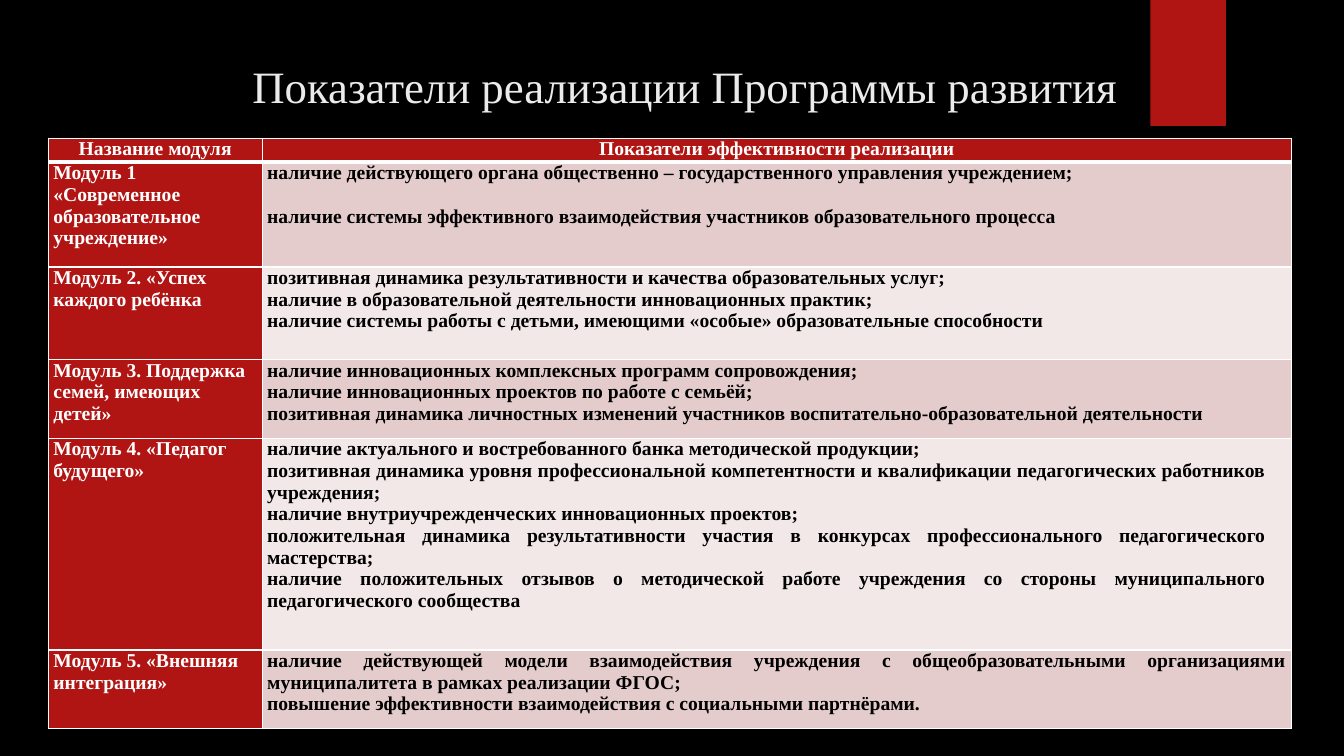
from lxml.etree import SubElement
from pptx import Presentation
from pptx.dml.color import RGBColor
from pptx.enum.shapes import MSO_SHAPE
from pptx.enum.text import MSO_ANCHOR, PP_ALIGN
from pptx.oxml.ns import qn
from pptx.util import Inches, Pt

FONT = "Times New Roman"
RED, WHITE, BLACK = "B01513", "FFFFFF", "000000"
BANDS = ("E4CCCC", "F2E8E7")
COLUMNS = (2.12, 10.21)
ROWS = (0.24, 1.04, 0.92, 0.78, 2.1, 0.78)
BLANK_LINE = 15.5
NARROWED_ROW = 4

HEADER = ("Название модуля", ["Показатели эффективности реализации"])
MODULES = [
    ("Модуль 1 «Современное образовательное учреждение»", [
        "наличие действующего органа общественно – государственного управления учреждением;",
        "наличие системы эффективного взаимодействия участников образовательного процесса"]),
    ("Модуль 2. «Успех каждого ребёнка", [
        "позитивная динамика результативности и качества образовательных услуг;",
        "наличие в образовательной деятельности инновационных практик;",
        "наличие системы работы с детьми, имеющими «особые» образовательные способности"]),
    ("Модуль 3. Поддержка семей, имеющих детей»", [
        "наличие инновационных комплексных программ сопровождения;",
        "наличие инновационных проектов по работе с семьёй;",
        "позитивная динамика личностных изменений участников воспитательно-образовательной деятельности"]),
    ("Модуль 4. «Педагог будущего»", [
        "наличие актуального и востребованного банка методической продукции;",
        "позитивная динамика уровня профессиональной компетентности и квалификации "
        "педагогических работников учреждения;",
        "наличие внутриучрежденческих инновационных проектов;",
        "положительная динамика результативности участия в конкурсах профессионального "
        "педагогического мастерства;",
        "наличие положительных отзывов о методической работе учреждения со стороны "
        "муниципального педагогического сообщества"]),
    ("Модуль 5. «Внешняя интеграция»", [
        "наличие действующей модели взаимодействия учреждения с общеобразовательными "
        "организациями муниципалитета в рамках реализации ФГОС;",
        "повышение эффективности взаимодействия с социальными партнёрами."]),
]


def paint(fill, color):
    fill.solid()
    fill.fore_color.rgb = RGBColor.from_string(color)


def style(p, size, color, align, bold=False):
    p.alignment = align
    for r in p.runs:
        r.font.name, r.font.size, r.font.bold = FONT, Pt(size), bold
        r.font.color.rgb = RGBColor.from_string(color)


def add_borders(cell, bottom=1):
    """Must run before the cell is filled, as lines precede the fill."""
    tc_pr = cell._tc.get_or_add_tcPr()
    for side, width in (("L", 1), ("R", 1), ("T", 1), ("B", bottom)):
        ln = SubElement(tc_pr, qn(f"a:ln{side}"), w=str(Pt(width)))
        SubElement(SubElement(ln, qn("a:solidFill")), qn("a:srgbClr"), val=WHITE)


def fill_cell(cell, lines, fill, color, align, bottom=1):
    cell.margin_left = cell.margin_right = Inches(0.05)
    cell.margin_top = cell.margin_bottom = 0
    add_borders(cell, bottom)
    paint(cell.fill, fill)
    cell.text_frame.text = "\n".join(lines)
    for p in cell.text_frame.paragraphs:
        style(p, 14, color, align, bold=True)


def add_ribbon(s, *box):
    sp = s.shapes.add_shape(MSO_SHAPE.RECTANGLE, *map(Inches, box))
    sp.shadow.inherit = False
    paint(sp.fill, RED)
    sp.line.fill.background()


def set_title(s, text, *box):
    sp = s.shapes.title
    sp.left, sp.top, sp.width, sp.height = map(Inches, box)
    tf = sp.text_frame
    tf.text = text
    tf.word_wrap = True
    tf.vertical_anchor = MSO_ANCHOR.MIDDLE
    style(tf.paragraphs[0], 32, "EBEBEB", PP_ALIGN.CENTER)


def add_modules_table(s, left, top):
    box = map(Inches, (left, top, sum(COLUMNS), sum(ROWS)))
    table = s.shapes.add_table(len(ROWS), len(COLUMNS), *box).table
    for column, width in zip(table.columns, COLUMNS):
        column.width = Inches(width)
    for row, height in zip(table.rows, ROWS):
        row.height = Inches(height)
    for i, (name, indicators) in enumerate([HEADER] + MODULES):
        name_cell, list_cell = table.cell(i, 0), table.cell(i, 1)
        if i == 0:
            fill_cell(name_cell, [name], RED, WHITE, PP_ALIGN.CENTER, bottom=3)
            fill_cell(list_cell, indicators, RED, WHITE, PP_ALIGN.CENTER, bottom=3)
        else:
            fill_cell(name_cell, [name], RED, WHITE, PP_ALIGN.LEFT)
            fill_cell(list_cell, indicators, BANDS[(i - 1) % 2], BLACK, PP_ALIGN.JUSTIFY)
    table.cell(1, 1).text_frame.paragraphs[1].space_before = Pt(BLANK_LINE)
    for p in table.cell(NARROWED_ROW, 1).text_frame.paragraphs:
        p._p.get_or_add_pPr().set("marR", str(Inches(0.2)))


def main():
    prs = Presentation()
    prs.slide_width, prs.slide_height = Inches(13.33), Inches(7.5)
    s = prs.slides.add_slide(prs.slide_layouts[5])
    paint(s.background.fill, BLACK)
    add_ribbon(s, 11.41, 0, 0.75, 1.25)
    set_title(s, "Показатели реализации Программы развития", 0.71, 0.5, 12.17, 0.7)
    add_modules_table(s, 0.48, 1.37)
    prs.save("out.pptx")


if __name__ == "__main__":
    main()
